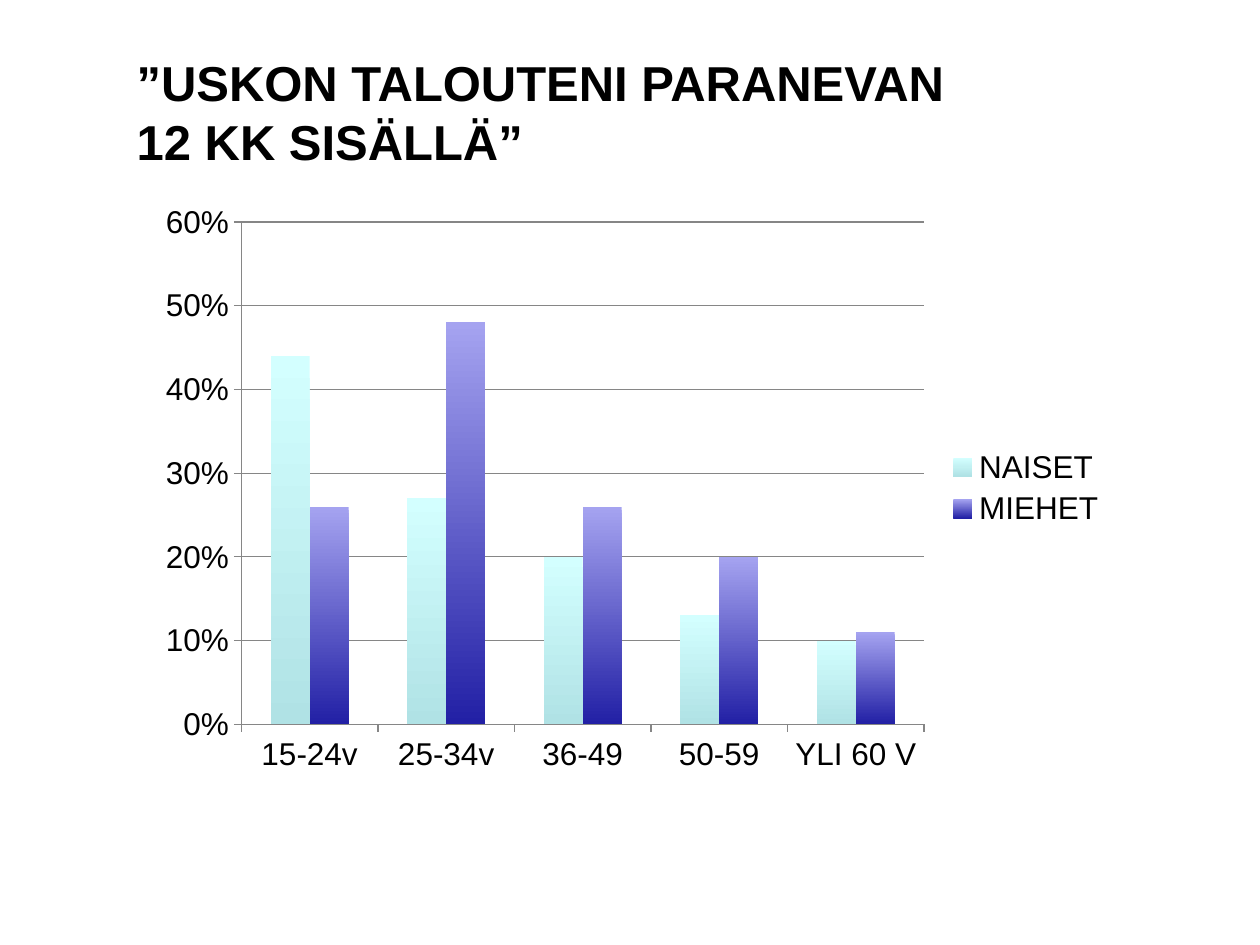
import pptx
import pptx.chart.data
import pptx.dml.color
import pptx.enum.chart
import pptx.enum.text
import pptx.oxml
import pptx.oxml.ns
import pptx.util

Pt = pptx.util.Pt
RGB = pptx.dml.color.RGBColor.from_string
ENUM = pptx.enum.chart

TITLE = ["”USKON TALOUTENI PARANEVAN ", "12 KK SISÄLLÄ”"]
AGES = ["15-24v", "25-34v", "36-49", "50-59", "YLI 60 V"]
SHARES = {
    "NAISET": [0.44, 0.27, 0.20, 0.13, 0.10],
    "MIEHET": [0.26, 0.48, 0.26, 0.20, 0.11],
    "Sarake1": [],
}
THEME = {
    "font": "Arial", "title": 28, "label": 18,
    "text": "000000", "back": "FFFFFF", "line": "868686",
    "NAISET": ("D3FFFF", "B0E2E5"),
    "MIEHET": ("A5A3F0", "2220A5"),
}
TITLE_BOX = (70.9, 26.4, 522, 60)
CHART_BOX = (82.2, 110, 557.3, 337.7)
PLOT = {"x": 0.1, "y": 0.05, "w": 0.7, "h": 0.85}


def style(font, size, bold=False):
    font.name, font.size, font.bold = THEME["font"], Pt(size), bold
    font.color.rgb = RGB(THEME["text"])


def write(frame, lines, size, bold=False):
    """Write lines as one paragraph with line breaks."""
    para = frame.paragraphs[0]
    para.alignment = pptx.enum.text.PP_ALIGN.LEFT
    para.line_spacing = 1.0
    for i, line in enumerate(lines):
        if i:
            para.add_line_break()
        run = para.add_run()
        run.text = line
        style(run.font, size, bold)


def rule(line):
    line.color.rgb = RGB(THEME["line"])
    line.width = Pt(0.75)


def place(chart):
    """Fix the inner plot area as fractions of the chart."""
    area = chart._chartSpace.chart.plotArea
    for old in area.findall(pptx.oxml.ns.qn("c:layout")):
        area.remove(old)
    modes = '<c:xMode val="edge"/><c:yMode val="edge"/>'
    sizes = "".join(f'<c:{key} val="{val}"/>' for key, val in PLOT.items())
    area.insert(0, pptx.oxml.parse_xml(
        f'<c:layout {pptx.oxml.ns.nsdecls("c")}><c:manualLayout>'
        f'<c:layoutTarget val="inner"/>{modes}{sizes}'
        '</c:manualLayout></c:layout>'))


def paint(bars):
    """Shade a series, or strip the value list of an empty one."""
    fill = bars.format.fill
    if not SHARES[bars.name]:
        fill.solid()
        fill.fore_color.rgb = RGB(THEME["back"])
        node = bars._element
        node.remove(node.find(pptx.oxml.ns.qn("c:val")))
        return
    fill.gradient()
    fill.gradient_angle = 270
    for stop, color in zip(fill.gradient_stops, THEME[bars.name]):
        stop.color.rgb = RGB(color)


def draw(slide):
    data = pptx.chart.data.CategoryChartData(number_format="0%")
    data.categories = AGES
    for name, vals in SHARES.items():
        data.add_series(name, vals)
    chart = slide.shapes.add_chart(
        ENUM.XL_CHART_TYPE.COLUMN_CLUSTERED, *map(Pt, CHART_BOX), data).chart
    style(chart.font, THEME["label"])
    chart.has_title = False
    chart.has_legend = True
    chart.legend.position = ENUM.XL_LEGEND_POSITION.RIGHT
    chart.legend.include_in_layout = False
    place(chart)

    plot = chart.plots[0]
    plot.gap_width, plot.overlap, plot.vary_by_categories = 150, 0, False
    for bars in plot.series:
        paint(bars)

    for axis in (chart.category_axis, chart.value_axis):
        axis.major_tick_mark = ENUM.XL_TICK_MARK.OUTSIDE
        rule(axis.format.line)
    shares = chart.value_axis
    shares.minimum_scale, shares.maximum_scale, shares.major_unit = 0, 0.6, 0.1
    shares.has_major_gridlines = True
    rule(shares.major_gridlines.format.line)
    shares.tick_labels.number_format = "0%"
    shares.tick_labels.number_format_is_linked = False


def main():
    deck = pptx.Presentation()
    deck.slide_width, deck.slide_height = Pt(720), Pt(540)
    slide = deck.slides.add_slide(deck.slide_layouts[5])
    slide.background.fill.solid()
    slide.background.fill.fore_color.rgb = RGB(THEME["back"])

    title = slide.shapes.title
    title.left, title.top, title.width, title.height = map(Pt, TITLE_BOX)
    frame = title.text_frame
    frame.word_wrap = True
    frame.auto_size = pptx.enum.text.MSO_AUTO_SIZE.NONE
    frame.vertical_anchor = pptx.enum.text.MSO_ANCHOR.TOP
    write(frame, TITLE, THEME["title"], bold=True)
    draw(slide)
    deck.save("out.pptx")


if __name__ == "__main__":
    main()
